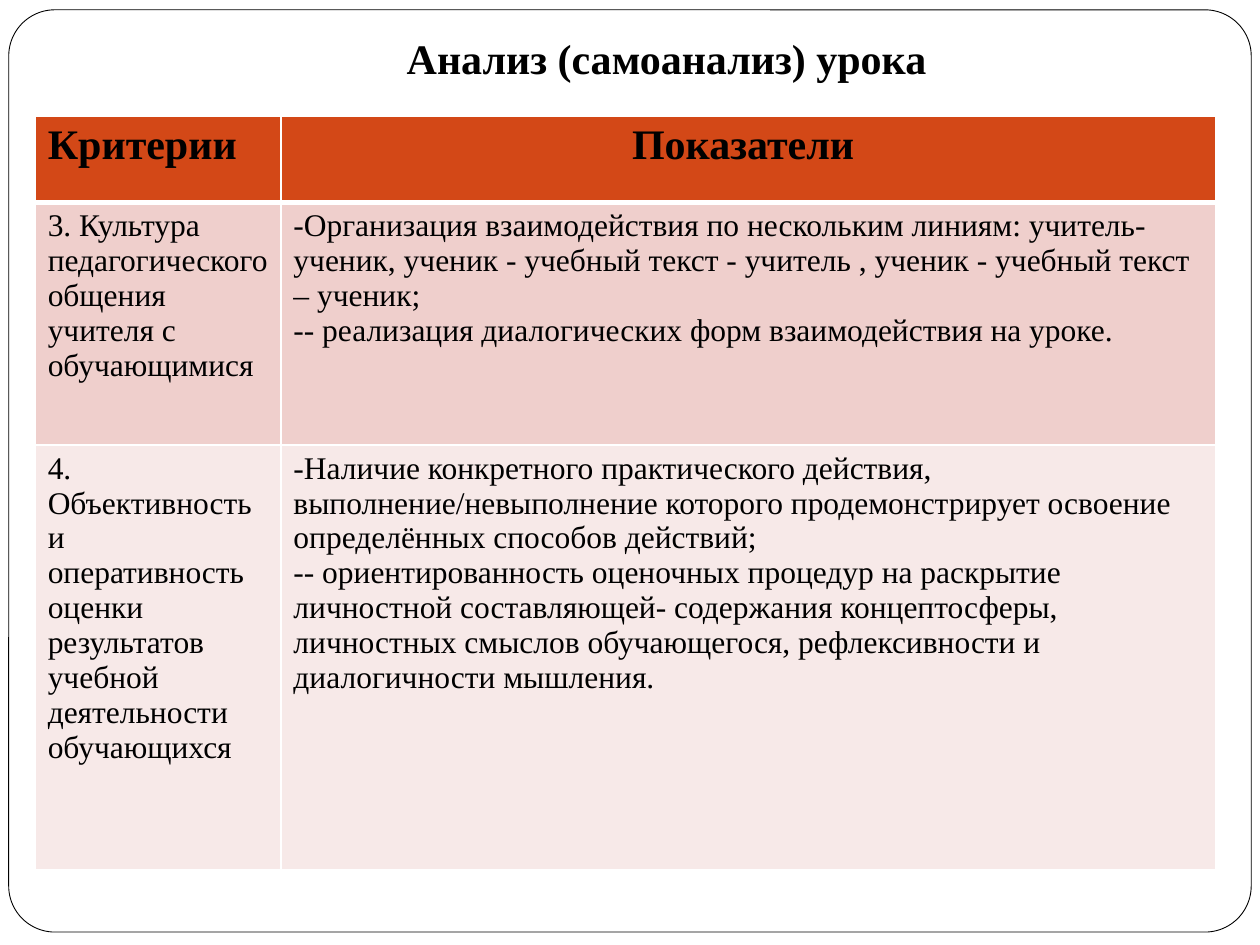
from dataclasses import dataclass

from lxml.etree import SubElement
from pptx import Presentation
from pptx.dml.color import RGBColor
from pptx.enum.shapes import MSO_SHAPE
from pptx.enum.text import PP_ALIGN
from pptx.oxml.ns import qn
from pptx.util import Pt

BLACK = RGBColor(0x00, 0x00, 0x00)
WHITE = RGBColor(0xFF, 0xFF, 0xFF)
ORANGE = RGBColor(0xD3, 0x48, 0x17)
ROSE = RGBColor(0xEF, 0xCF, 0xCC)
PALE_ROSE = RGBColor(0xF7, 0xE9, 0xE8)
FONT = "Times New Roman"
HEADING_SIZE, BODY_SIZE = 24, 18
COLUMN_WIDTHS = (140.4, 534.2)


@dataclass
class Criterion:
    name: str
    indicators: list[str]
    height: float
    fill: RGBColor


CRITERIA = [
    Criterion(
        "3. Культура педагогического общения учителя с обучающимися",
        ["Организация взаимодействия по нескольким линиям: учитель-ученик, "
         "ученик - учебный текст - учитель , ученик - учебный текст – ученик;",
         "- реализация диалогических форм взаимодействия на уроке."],
        138.6, ROSE),
    Criterion(
        "4. Объективность и оперативность оценки результатов учебной "
        "деятельности обучающихся",
        ["Наличие конкретного практического действия, выполнение/невыполнение "
         "которого продемонстрирует освоение определённых способов действий;",
         "- ориентированность оценочных процедур на раскрытие личностной "
         "составляющей- содержания концептосферы, личностных смыслов "
         "обучающегося, рефлексивности и диалогичности мышления."],
        242.6, PALE_ROSE),
]


def format_span(span, size: float, bold: bool) -> None:
    span.font.name = FONT
    span.font.size = Pt(size)
    span.font.bold = bold
    span.font.color.rgb = BLACK


def format_text(frame, size: float, bold: bool, align=PP_ALIGN.LEFT) -> None:
    for para in frame.paragraphs:
        para.alignment = align
        for span in para.runs:
            format_span(span, size, bold)


def add_dashes(frame) -> None:
    for para in frame.paragraphs:
        properties = para._p.get_or_add_pPr()
        properties.set("marL", "0")
        properties.set("indent", "0")
        SubElement(properties, qn("a:buFont"), typeface=FONT)
        SubElement(properties, qn("a:buChar"), char="-")


def style_cell(cell, fill: RGBColor, top: float = 1, bottom: float = 1) -> None:
    # Borders come before the fill in the cell properties
    properties = cell._tc.get_or_add_tcPr()
    for side, width in (("L", 1), ("R", 1), ("T", top), ("B", bottom)):
        line = SubElement(properties, qn(f"a:ln{side}"), w=str(int(Pt(width))))
        solid = SubElement(line, qn("a:solidFill"))
        SubElement(solid, qn("a:srgbClr"), val=str(WHITE))
    cell.fill.solid()
    cell.fill.fore_color.rgb = fill


def add_frame(page) -> None:
    frame = page.shapes.add_shape(
        MSO_SHAPE.ROUNDED_RECTANGLE, Pt(5), Pt(5.6), Pt(710), Pt(527))
    frame.adjustments[0] = 0.05
    frame.shadow.inherit = False
    frame.fill.solid()
    frame.fill.fore_color.rgb = WHITE
    frame.line.color.rgb = BLACK
    frame.line.width = Pt(0.5)


def add_title(page) -> None:
    box = page.shapes.add_textbox(Pt(212.4), Pt(15.1), Pt(337), Pt(58.3))
    box.text_frame.word_wrap = False
    box.text_frame.text = "Анализ (самоанализ) урока"
    format_text(box.text_frame, HEADING_SIZE, True, PP_ALIGN.CENTER)


def add_criteria_table(page) -> None:
    heights = [49.4] + [criterion.height for criterion in CRITERIA]
    table = page.shapes.add_table(
        len(heights), len(COLUMN_WIDTHS), Pt(20.1), Pt(66.2),
        Pt(sum(COLUMN_WIDTHS)), Pt(sum(heights))).table
    for column, width in zip(table.columns, COLUMN_WIDTHS):
        column.width = Pt(width)
    for row, height in zip(table.rows, heights):
        row.height = Pt(height)

    # Header row
    headings = (("Критерии", PP_ALIGN.LEFT), ("Показатели ", PP_ALIGN.CENTER))
    for cell, (heading, align) in zip(table.rows[0].cells, headings):
        cell.text_frame.text = heading
        format_text(cell.text_frame, HEADING_SIZE, True, align)
        style_cell(cell, ORANGE, bottom=3)
    space = table.cell(0, 0).text_frame.paragraphs[0].add_run()
    space.text = " "
    format_span(space, BODY_SIZE, True)

    # Criteria rows
    for index, criterion in enumerate(CRITERIA, start=1):
        name_cell, indicator_cell = table.rows[index].cells
        name_cell.text_frame.text = criterion.name
        indicator_cell.text_frame.text = "\n".join(criterion.indicators)
        for cell in (name_cell, indicator_cell):
            format_text(cell.text_frame, BODY_SIZE, False)
            style_cell(cell, criterion.fill, top=3 if index == 1 else 1)
        add_dashes(indicator_cell.text_frame)


def main() -> None:
    deck = Presentation()
    deck.slide_width, deck.slide_height = Pt(720), Pt(540)
    page = deck.slides.add_slide(deck.slide_layouts[6])
    add_frame(page)
    add_title(page)
    add_criteria_table(page)
    deck.save("out.pptx")


if __name__ == "__main__":
    main()
